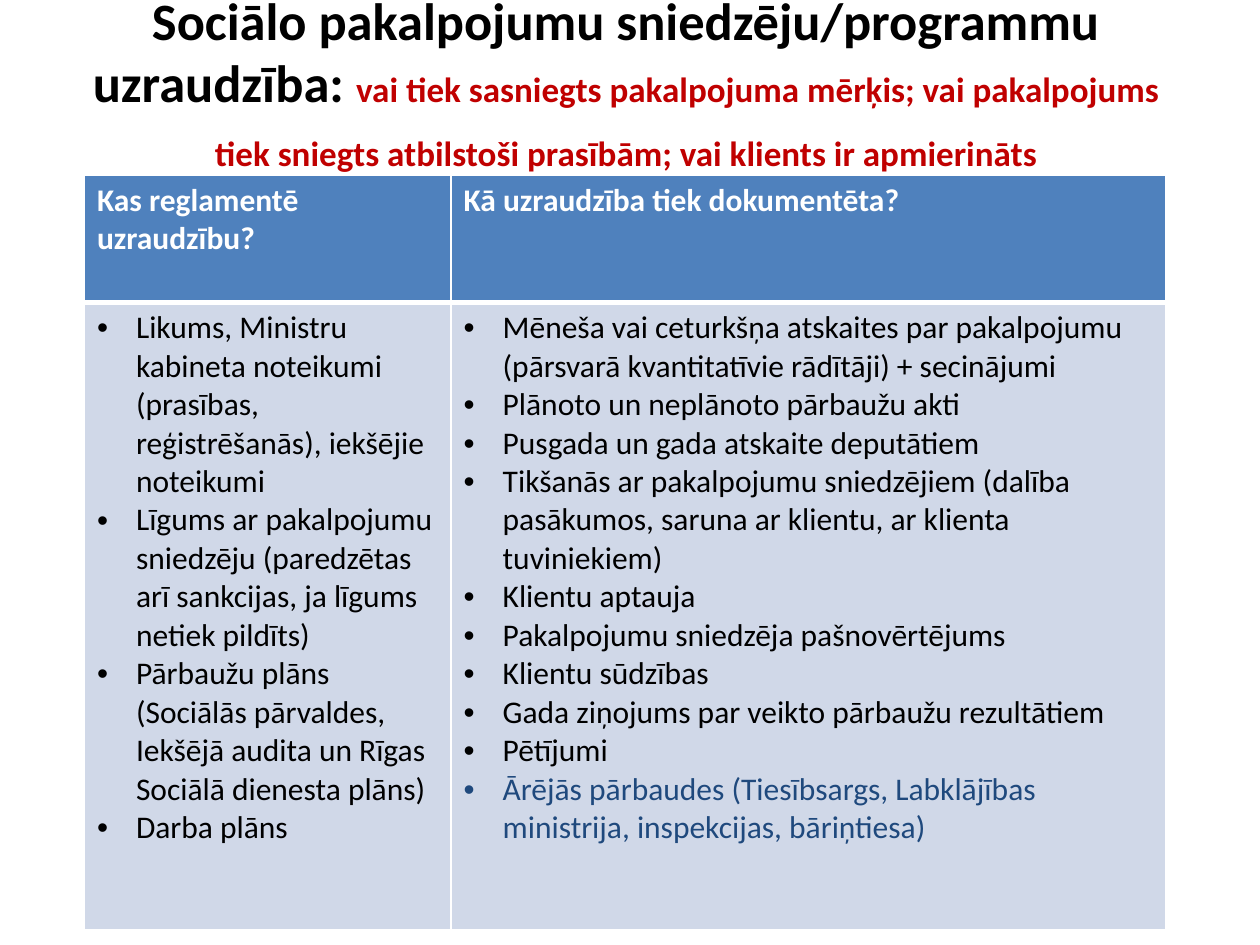
import pptx
import pptx.util
import pptx.dml.color
import pptx.enum.text
import pptx.oxml.ns
from dataclasses import dataclass
from lxml import etree


@dataclass(frozen=True)
class Theme:
    font: str = "Calibri"
    ink: str = "000000"
    question: str = "C00000"
    external: str = "1F497D"
    header_fill: str = "4F81BD"
    body_fill: str = "D0D8E8"
    light: str = "FFFFFF"
    title_size: int = 30
    question_size: int = 20
    table_size: int = 18
    title_pitch: int = 35


class Deck:
    COLUMNS, ROWS = 100, 75

    def __init__(self, theme):
        self.theme = theme
        self.file = pptx.Presentation()
        self.file.slide_width = pptx.util.Inches(10)
        self.file.slide_height = pptx.util.Inches(7.5)
        self.slide = self.file.slides.add_slide(self.file.slide_layouts[5])

    def across(self, columns):
        return round(self.file.slide_width * columns / self.COLUMNS)

    def down(self, rows):
        return round(self.file.slide_height * rows / self.ROWS)

    def format_run(self, run, size, color, bold=False):
        run.font.name = self.theme.font
        run.font.size = pptx.util.Pt(size)
        run.font.bold = bold
        run.font.color.rgb = pptx.dml.color.RGBColor.from_string(color)

    def title(self, left, top, width, height, parts):
        heading = self.slide.shapes.title
        heading.left, heading.top = self.across(left), self.down(top)
        heading.width, heading.height = self.across(width), self.down(height)
        frame = heading.text_frame
        frame.word_wrap = True
        frame.auto_size = pptx.enum.text.MSO_AUTO_SIZE.NONE
        # The last line rests just above the table
        frame.vertical_anchor = pptx.enum.text.MSO_ANCHOR.BOTTOM
        frame.margin_bottom = self.down(1.7)
        paragraph = frame.paragraphs[0]
        paragraph.alignment = pptx.enum.text.PP_ALIGN.CENTER
        paragraph.line_spacing = pptx.util.Pt(self.theme.title_pitch)
        for words, size, color in parts:
            run = paragraph.add_run()
            run.text = words
            self.format_run(run, size, color, bold=True)

    def bullet(self, paragraph):
        indent = self.across(3.1)
        properties = paragraph._p.get_or_add_pPr()
        properties.set("marL", str(indent))
        properties.set("indent", str(-indent))
        for tag, name, value in (("a:buFont", "typeface", "Arial"), ("a:buChar", "char", "•")):
            etree.SubElement(properties, pptx.oxml.ns.qn(tag)).set(name, value)

    def borders(self, cell, bottom_width):
        properties = cell._tc.get_or_add_tcPr()
        widths = {"a:lnL": 1, "a:lnR": 1, "a:lnT": 1, "a:lnB": bottom_width}
        for place, (tag, width) in enumerate(widths.items()):
            line = etree.Element(pptx.oxml.ns.qn(tag), w=str(pptx.util.Pt(width)))
            fill = etree.SubElement(line, pptx.oxml.ns.qn("a:solidFill"))
            etree.SubElement(fill, pptx.oxml.ns.qn("a:srgbClr")).set("val", self.theme.light)
            properties.insert(place, line)

    def cell(self, cell, entries, fill, bold, bulleted, bottom_width):
        cell.fill.solid()
        cell.fill.fore_color.rgb = pptx.dml.color.RGBColor.from_string(fill)
        self.borders(cell, bottom_width)
        cell.text_frame.text = "\n".join(words for words, _ in entries)
        for paragraph, (_, color) in zip(cell.text_frame.paragraphs, entries):
            if bulleted:
                self.bullet(paragraph)
            self.format_run(paragraph.runs[0], self.theme.table_size, color, bold)

    def table(self, left, top, widths, heights, headers, lists):
        grid = self.slide.shapes.add_table(
            len(heights), len(widths), self.across(left), self.down(top),
            self.across(sum(widths)), self.down(sum(heights))).table
        for column, width in zip(grid.columns, widths):
            column.width = self.across(width)
        for row, height in zip(grid.rows, heights):
            row.height = self.down(height)
        for index, (header, entries) in enumerate(zip(headers, lists)):
            self.cell(grid.cell(0, index), [(header, self.theme.light)],
                      self.theme.header_fill, bold=True, bulleted=False, bottom_width=3)
            self.cell(grid.cell(1, index), entries,
                      self.theme.body_fill, bold=False, bulleted=True, bottom_width=1)


REGULATIONS = [
    "Likums, Ministru kabineta noteikumi (prasības, reģistrēšanās), iekšējie noteikumi",
    "Līgums ar pakalpojumu sniedzēju (paredzētas arī sankcijas, ja līgums netiek pildīts)",
    "Pārbaužu plāns (Sociālās pārvaldes, Iekšējā audita un Rīgas Sociālā dienesta plāns)",
    "Darba plāns",
]
DOCUMENTS = [
    "Mēneša vai ceturkšņa atskaites par pakalpojumu (pārsvarā kvantitatīvie rādītāji) + secinājumi",
    "Plānoto un neplānoto pārbaužu akti",
    "Pusgada un gada atskaite deputātiem",
    "Tikšanās ar pakalpojumu sniedzējiem (dalība pasākumos, saruna ar klientu, ar klienta tuviniekiem)",
    "Klientu aptauja",
    "Pakalpojumu sniedzēja pašnovērtējums",
    "Klientu sūdzības",
    "Gada ziņojums par veikto pārbaužu rezultātiem",
    "Pētījumi",
]
EXTERNAL_CHECKS = "Ārējās pārbaudes (Tiesībsargs, Labklājības ministrija, inspekcijas, bāriņtiesa)"


def main():
    theme = Theme()
    deck = Deck(theme)

    # Heading with the supervision questions
    deck.title(4.3, 2.9, 90.8, 12.6, [
        ("Sociālo pakalpojumu sniedzēju/programmu uzraudzība: ", theme.title_size, theme.ink),
        ("vai tiek sasniegts pakalpojuma mērķis; vai pakalpojums tiek sniegts "
         "atbilstoši prasībām; vai klients ir apmierināts", theme.question_size, theme.question),
    ])

    # Regulation and documentation of the supervision
    regulations = [(words, theme.ink) for words in REGULATIONS]
    documents = [(words, theme.ink) for words in DOCUMENTS]
    documents.append((EXTERNAL_CHECKS, theme.external))
    deck.table(6.7, 13.9, widths=(29.1, 56.7), heights=(10.1, 49.8),
               headers=("Kas reglamentē uzraudzību?", "Kā uzraudzība tiek dokumentēta?"),
               lists=(regulations, documents))

    deck.file.save("out.pptx")


if __name__ == "__main__":
    main()
